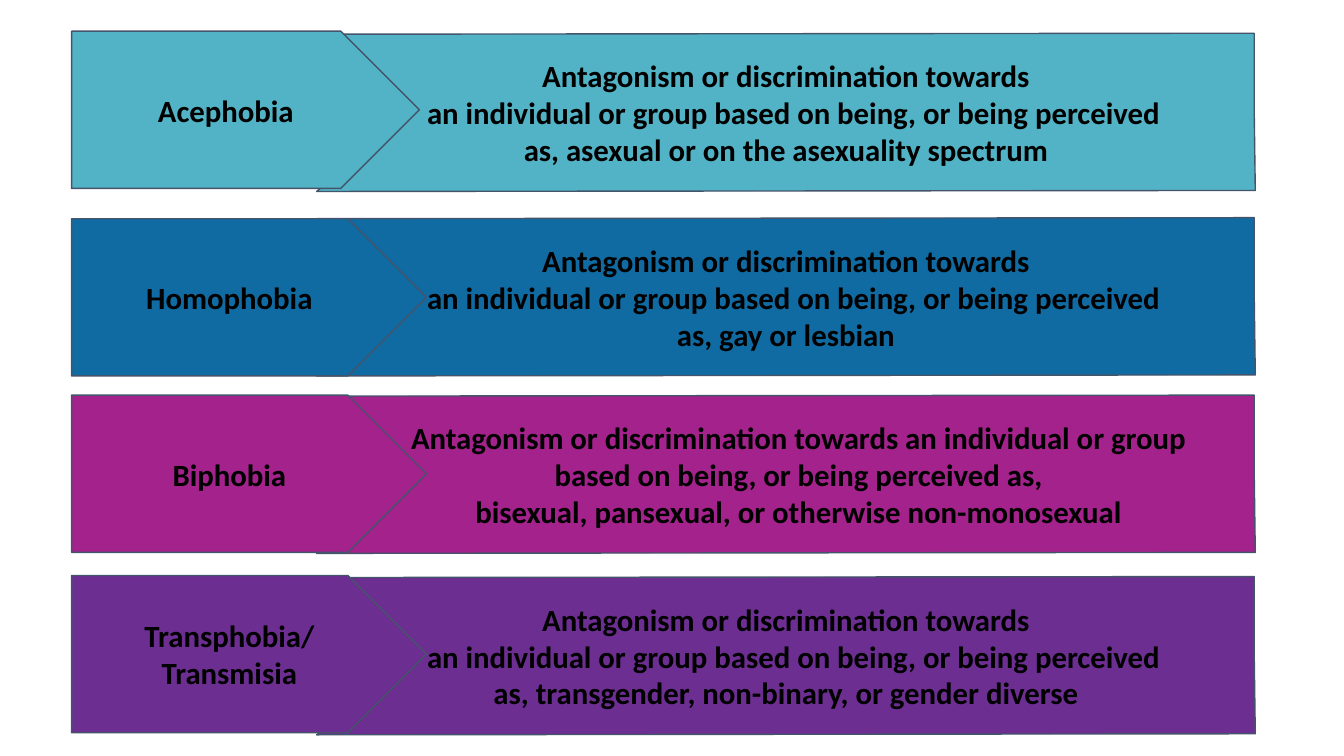
from pptx import Presentation
from pptx.dml.color import RGBColor
from pptx.enum.shapes import MSO_SHAPE
from pptx.enum.text import MSO_ANCHOR, PP_ALIGN
from pptx.util import Inches, Pt

PENTAGON = MSO_SHAPE.PENTAGON
MIDDLE = MSO_ANCHOR.MIDDLE
CENTER = PP_ALIGN.CENTER

COLORS = {
    "teal": "52B3C6",
    "blue": "106BA2",
    "magenta": "A3228B",
    "purple": "6D2E92",
    "outline": "44546A",
    "text": "000000",
}

BAR_OUTLINE = [
    (3.14, 0.01), (12.44, 0), (12.44, 0.8), (12.45, 1.56),
    (3.14, 1.57), (4.08, 0.79), (3.59, 0.39),
]

TOWARDS = "Antagonism or discrimination towards"
BASED_ON = "an individual or group based on being, or being perceived"

ROWS = [
    ("Acephobia", "teal", 0.31, 3.45, 0.33,
     [TOWARDS, BASED_ON, "as, asexual or on the asexuality spectrum"], [0, 0.15, 0]),
    ("Homophobia", "blue", 2.17, 3.52, 2.16,
     [TOWARDS, BASED_ON, "as, gay or lesbian"], [0, 0.15, 0]),
    ("Biphobia", "magenta", 3.92, 3.52, 3.92,
     [TOWARDS + " an individual or group",
      "based on being, or being perceived as,",
      "bisexual, pansexual, or otherwise non-monosexual"], [0.25, 0.25, 0.25]),
    ("Transphobia/ Transmisia", "purple", 5.71, 3.52, 5.72,
     [TOWARDS, BASED_ON, "as, transgender, non-binary, or gender diverse"], [0, 0.15, 0]),
]


def write(tf, lines, indents=(0,), font="Calibri", size=22, color="text", bold=True):
    """Fill a text frame with centred lines, each with its own left indent."""
    tf.word_wrap = True
    tf.vertical_anchor = MIDDLE
    for i, (line, indent) in enumerate(zip(lines, indents)):
        p = tf.add_paragraph() if i else tf.paragraphs[0]
        p.alignment = CENTER
        if indent:
            p._p.get_or_add_pPr().set("marL", str(Inches(indent)))
        r = p.add_run()
        r.text = line
        r.font.name = font
        r.font.size = Pt(size)
        r.font.bold = bold
        r.font.color.rgb = RGBColor.from_string(COLORS[color])


class Canvas:
    """Hold the style and the current slide."""

    def __init__(self, slide, outline="outline", line_width=1):
        """Keep the slide and the outline style."""
        self.slide = slide
        self.outline = outline
        self.line_width = line_width

    def paint(self, sp, color):
        """Apply the fill and outline."""
        sp.shadow.inherit = False
        sp.fill.solid()
        sp.fill.fore_color.rgb = RGBColor.from_string(COLORS[color])
        sp.line.color.rgb = RGBColor.from_string(COLORS[self.outline])
        sp.line.width = Pt(self.line_width)

    def bar(self, top, color, lines, indents):
        """Draw a notched definition bar."""
        points = [(Inches(x), Inches(top + y)) for x, y in BAR_OUTLINE]
        builder = self.slide.shapes.build_freeform(*points[0])
        builder.add_line_segments(points[1:], close=True)
        sp = builder.convert_to_shape()
        self.paint(sp, color)
        write(sp.text_frame, lines, indents)

    def arrow(self, top, width, color, label):
        """Draw a term arrow."""
        sp = self.slide.shapes.add_shape(
            PENTAGON, Inches(0.71), Inches(top), Inches(width), Inches(1.56))
        self.paint(sp, color)
        write(sp.text_frame, [label])


def main():
    """Build and save the slide."""
    prs = Presentation()
    prs.slide_width = Inches(13.33)
    prs.slide_height = Inches(7.5)
    s = Canvas(prs.slides.add_slide(prs.slide_layouts[6]))
    for term, color, arrow_top, arrow_width, bar_top, lines, indents in ROWS:
        s.bar(bar_top, color, lines, indents)
        s.arrow(arrow_top, arrow_width, color, term)
    prs.save("out.pptx")


if __name__ == "__main__":
    main()
